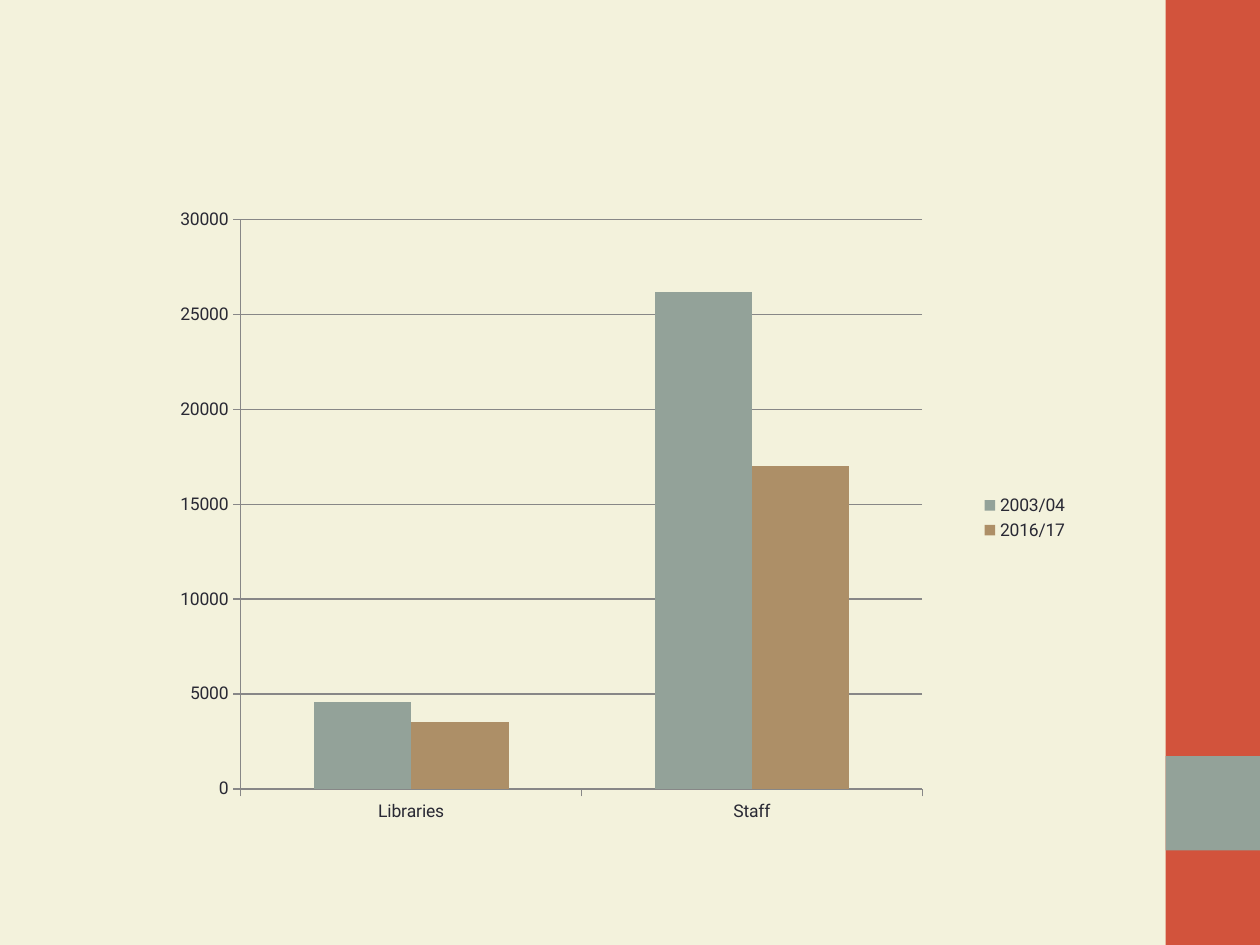
from lxml import etree
from pptx import Presentation
from pptx.chart.data import CategoryChartData
from pptx.dml.color import RGBColor
from pptx.enum import chart as ch, shapes
from pptx.oxml.ns import qn
from pptx.util import Inches, Pt

CREAM = RGBColor(0xF3, 0xF2, 0xDC)
RED = RGBColor(0xD2, 0x53, 0x3C)
SAGE = RGBColor(0x93, 0xA2, 0x99)
TAN = RGBColor(0xAD, 0x8F, 0x67)
INK = RGBColor(0x29, 0x29, 0x34)
GREY = RGBColor(0x87, 0x87, 0x87)

CATEGORIES = ["Libraries", "Staff"]
SERIES = [("2003/04", (4600, 26200), SAGE), ("2016/17", (3500, 17000), TAN)]
PLOT_BOX = {"x": 0.1, "y": 0.06, "w": 0.73, "h": 0.84}


def add_block(slide, left, top, width, height, color):
    sp = slide.shapes.add_shape(
        shapes.MSO_SHAPE.RECTANGLE,
        Inches(left), Inches(top), Inches(width), Inches(height))
    sp.shadow.inherit = False
    sp.fill.solid()
    sp.fill.fore_color.rgb = color
    sp.line.fill.background()


def add_sidebar(slide, left, top, width, height):
    add_block(slide, left, top, width, height, RED)
    add_block(slide, left, top + height - 2 * width, width, width, SAGE)


def set_plot_box(chart, box):
    area = chart._chartSpace.chart.plotArea
    for old in area.findall(qn("c:layout")):
        area.remove(old)
    layout = etree.Element(qn("c:layout"))
    area.insert(0, layout)
    manual = etree.SubElement(layout, qn("c:manualLayout"))
    settings = {"layoutTarget": "inner", "xMode": "edge", "yMode": "edge", **box}
    for name, value in settings.items():
        etree.SubElement(manual, qn(f"c:{name}")).set("val", str(value))


def add_library_chart(slide, left, top, width, height):
    data = CategoryChartData()
    data.categories = CATEGORIES
    for name, values, _ in SERIES:
        data.add_series(name, values)
    chart = slide.shapes.add_chart(
        ch.XL_CHART_TYPE.COLUMN_CLUSTERED,
        Inches(left), Inches(top), Inches(width), Inches(height), data).chart
    chart.has_title = False
    chart.font.name = "Roboto"
    chart.font.size = Pt(10)
    chart.font.color.rgb = INK

    chart.has_legend = True
    chart.legend.position = ch.XL_LEGEND_POSITION.RIGHT
    chart.legend.include_in_layout = False

    plot = chart.plots[0]
    plot.vary_by_categories = False
    plot.gap_width = 150
    plot.overlap = 0
    for series, (_, _, color) in zip(plot.series, SERIES):
        series.format.fill.solid()
        series.format.fill.fore_color.rgb = color

    for axis in (chart.category_axis, chart.value_axis):
        axis.major_tick_mark = ch.XL_TICK_MARK.OUTSIDE
        axis.minor_tick_mark = ch.XL_TICK_MARK.NONE
        axis.format.line.color.rgb = GREY
        axis.format.line.width = Pt(0.75)

    axis = chart.value_axis
    axis.minimum_scale = 0
    axis.maximum_scale = 30000
    axis.major_unit = 5000
    axis.has_major_gridlines = True
    axis.major_gridlines.format.line.color.rgb = GREY
    axis.major_gridlines.format.line.width = Pt(0.75)
    set_plot_box(chart, PLOT_BOX)


def main():
    prs = Presentation()
    prs.slide_width = Inches(10)
    prs.slide_height = Inches(7.5)
    slide = prs.slides.add_slide(prs.slide_layouts[6])
    slide.background.fill.solid()
    slide.background.fill.fore_color.rgb = CREAM
    add_sidebar(slide, 9.25, 0, 0.75, 7.5)
    add_library_chart(slide, 1.17, 1.42, 7.41, 5.38)
    prs.save("out.pptx")


if __name__ == "__main__":
    main()
